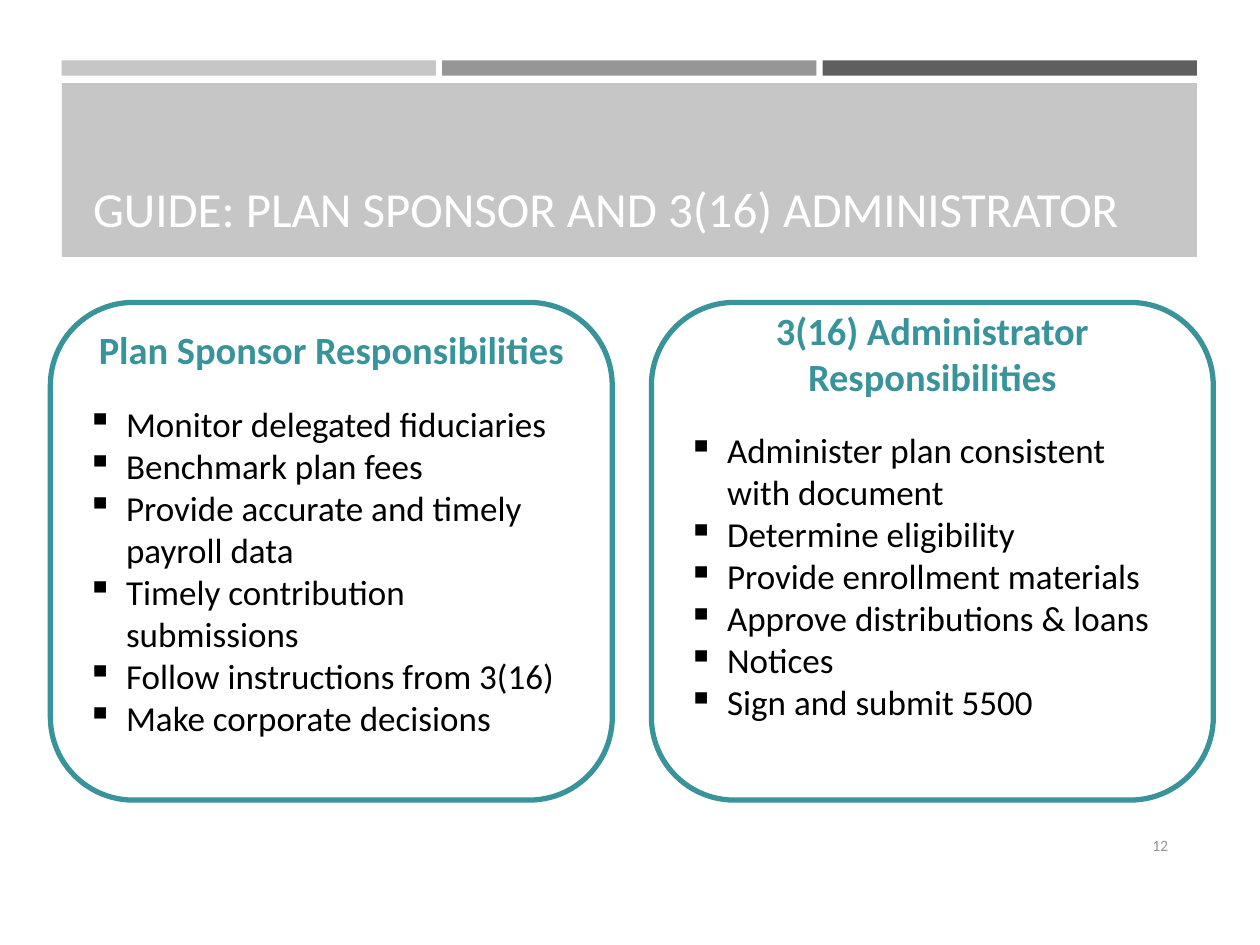
from lxml import etree
from pptx import Presentation
from pptx.dml.color import RGBColor
from pptx.enum import shapes, text
from pptx.oxml import ns
from pptx.util import Inches, Pt

COLORS = {
    "light": "C6C6C6",
    "middle": "969696",
    "dark": "5F5F5F",
    "teal": "38939B",
    "white": "FFFFFF",
    "black": "000000",
}


class SlideBuilder:
    font_name = "Calibri"
    bullet_indent = Inches(0.31)

    def __init__(self, slide):
        self.slide = slide

    def color(self, name):
        return RGBColor.from_string(COLORS[name])

    def style(self, paragraph, size, color, bold=False, align=text.PP_ALIGN.LEFT):
        paragraph.alignment = align
        font = paragraph.font
        font.name, font.size, font.bold = self.font_name, Pt(size), bold
        font.color.rgb = self.color(color)

    def bullet(self, paragraph):
        properties = paragraph._p.get_or_add_pPr()
        properties.set("marL", str(self.bullet_indent))
        properties.set("indent", str(-self.bullet_indent))
        etree.SubElement(properties, ns.qn("a:buChar")).set("char", "▪")

    def bar(self, left, top, width, height, color):
        shape = self.slide.shapes.add_shape(
            shapes.MSO_SHAPE.RECTANGLE,
            Inches(left), Inches(top), Inches(width), Inches(height))
        shape.shadow.inherit = False
        shape.fill.solid()
        shape.fill.fore_color.rgb = self.color(color)
        shape.line.fill.background()

    def label(self, left, top, width, height, words, size, color, anchor, align):
        box = self.slide.shapes.add_textbox(
            Inches(left), Inches(top), Inches(width), Inches(height))
        frame = box.text_frame
        frame.word_wrap = True
        frame.vertical_anchor = anchor
        frame.text = words
        self.style(frame.paragraphs[0], size, color, align=align)

    def card(self, left, top, width, height, headings, items, bottom):
        shape = self.slide.shapes.add_shape(
            shapes.MSO_SHAPE.ROUNDED_RECTANGLE,
            Inches(left), Inches(top), Inches(width), Inches(height))
        shape.shadow.inherit = False
        shape.fill.background()
        shape.line.color.rgb = self.color("teal")
        shape.line.width = Pt(3)
        frame = shape.text_frame
        frame.word_wrap = True
        frame.vertical_anchor = text.MSO_ANCHOR.MIDDLE
        frame.margin_bottom = Inches(bottom)
        frame.text = "\n".join(headings + items)
        count = len(headings)
        for paragraph in frame.paragraphs[:count]:
            self.style(paragraph, 22, "teal", True, text.PP_ALIGN.CENTER)
        frame.paragraphs[count - 1].space_after = Pt(17)
        for paragraph in frame.paragraphs[count:]:
            self.style(paragraph, 20, "black")
            self.bullet(paragraph)


def main():
    presentation = Presentation()
    presentation.slide_width, presentation.slide_height = Inches(10), Inches(7.5)
    builder = SlideBuilder(presentation.slides.add_slide(presentation.slide_layouts[6]))

    # Header bars and title band
    for index, color in enumerate(("light", "middle", "dark")):
        builder.bar(0.49 + index * 3.02, 0.48, 2.97, 0.12, color)
    builder.bar(0.49, 0.66, 9.01, 1.38, "light")
    builder.label(0.64, 0.75, 8.74, 1.18, "GUIDE: PLAN SPONSOR AND 3(16) ADMINISTRATOR",
                  28, "white", text.MSO_ANCHOR.BOTTOM, text.PP_ALIGN.LEFT)

    # Responsibility cards: headings, duties, bottom margin
    cards = [
        (["Plan Sponsor Responsibilities"],
         ["Monitor delegated fiduciaries",
          "Benchmark plan fees",
          "Provide accurate and timely payroll data",
          "Timely contribution submissions",
          "Follow instructions from 3(16)",
          "Make corporate decisions"], 0.35),
        (["3(16) Administrator", "Responsibilities"],
         ["Administer plan consistent with document",
          "Determine eligibility",
          "Provide enrollment materials",
          "Approve distributions & loans",
          "Notices",
          "Sign and submit 5500"], 0.63),
    ]
    for index, (headings, items, bottom) in enumerate(cards):
        builder.card(0.4 + index * 4.77, 2.4, 4.46, 3.95, headings, items, bottom)

    # Slide number
    builder.label(8.53, 6.51, 0.84, 0.4, "12", 9, "middle",
                  text.MSO_ANCHOR.MIDDLE, text.PP_ALIGN.RIGHT)

    presentation.save("out.pptx")


if __name__ == "__main__":
    main()
